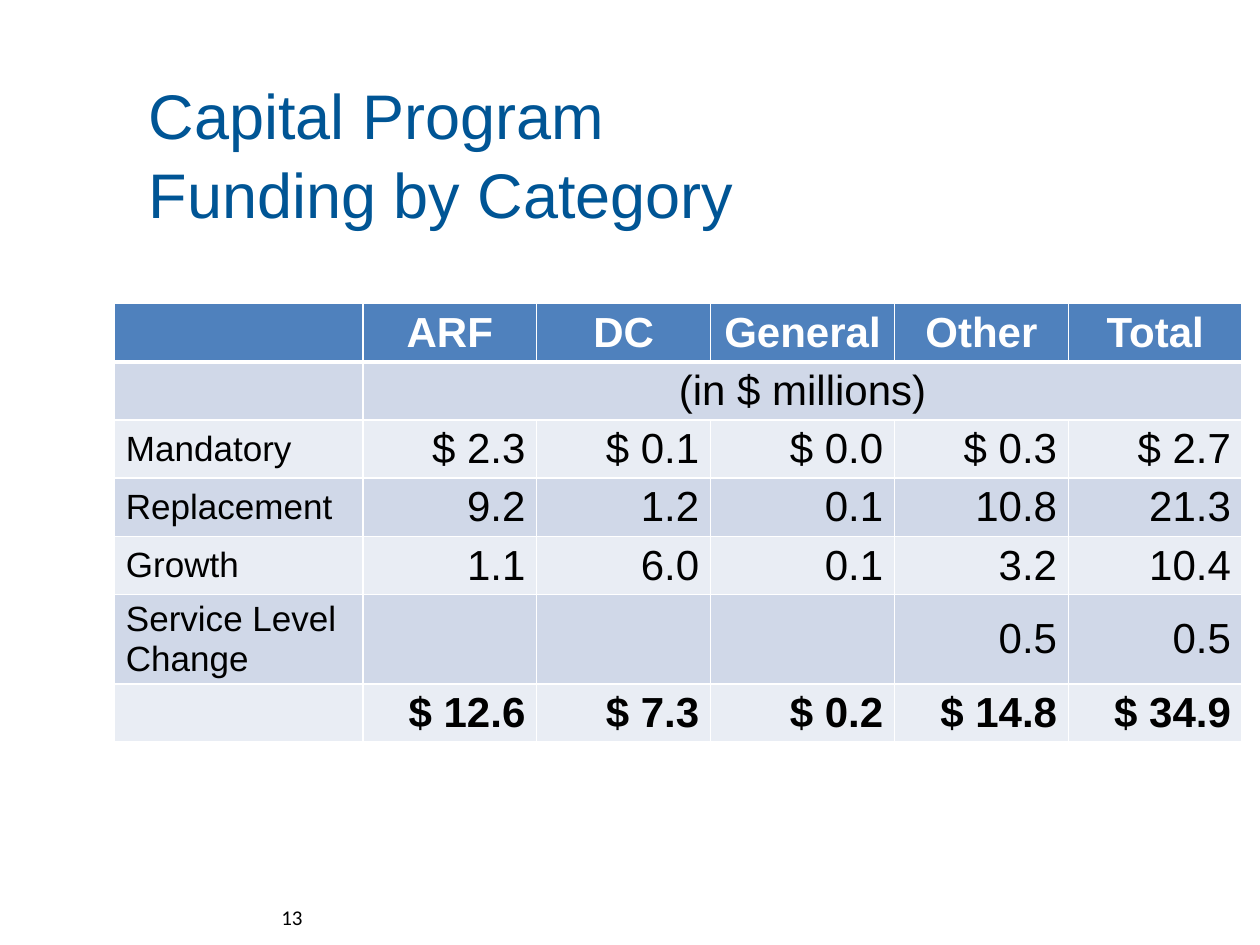
from typing import NamedTuple

from lxml.etree import SubElement
from pptx import Presentation
from pptx.dml.color import RGBColor
from pptx.enum.text import MSO_ANCHOR as Anchor, MSO_AUTO_SIZE as AutoSize, PP_ALIGN as Align
from pptx.oxml.ns import qn
from pptx.util import Inches, Pt

COLORS = {
    "title": "005595",
    "header": "4F81BD",
    "dark_band": "D0D8E8",
    "light_band": "E9EDF4",
    "white": "FFFFFF",
    "black": "000000",
}


class Style(NamedTuple):
    size: int
    color: str = "black"
    bold: bool = False
    align: Align = Align.RIGHT
    name: str = "Arial"


class FundingRow(NamedTuple):
    category: str
    amounts: tuple
    style: Style


TITLE = Style(36, "title", align=Align.LEFT)
HEADER = Style(24, "white", True, Align.CENTER)
UNITS = Style(24, align=Align.CENTER)
CATEGORY = Style(20, align=Align.LEFT)
AMOUNT = Style(24)
TOTAL = Style(24, bold=True)
PAGE = Style(12, name="Calibri")

FUNDING = [
    FundingRow("", ("ARF", "DC", "General", "Other", "Total"), HEADER),
    FundingRow("", ("(in $ millions)", "", "", "", ""), UNITS),
    FundingRow("Mandatory", ("$ 2.3", "$ 0.1", "$ 0.0", "$ 0.3", "$ 2.7"), AMOUNT),
    FundingRow("Replacement", ("9.2", "1.2", "0.1", "10.8", "21.3"), AMOUNT),
    FundingRow("Growth", ("1.1", "6.0", "0.1", "3.2", "10.4"), AMOUNT),
    FundingRow("Service Level Change", ("", "", "", "0.5", "0.5"), AMOUNT),
    FundingRow("", ("$ 12.6", "$ 7.3", "$ 0.2", "$ 14.8", "$ 34.9"), TOTAL),
]
COLUMN_WIDTHS = [1.97, 1.38, 1.38, 1.46, 1.38, 1.38]
ROW_HEIGHTS = [0.16] + [0.41] * 6
CELL_FORMAT = {
    "margin_left": Inches(0.09),
    "margin_right": Inches(0.09),
    "margin_top": Inches(0.045),
    "margin_bottom": Inches(0.045),
    "vertical_anchor": Anchor.MIDDLE,
}
FRAME_FORMAT = {
    "word_wrap": True,
    "auto_size": AutoSize.NONE,
    "vertical_anchor": Anchor.MIDDLE,
}


def apply_format(target, values: dict) -> None:
    for key, value in values.items():
        setattr(target, key, value)


def write(frame, text: str, style: Style) -> None:
    frame.text = text
    paragraph = frame.paragraphs[0]
    paragraph.alignment = style.align
    apply_format(paragraph.font, {
        "size": Pt(style.size), "bold": style.bold, "name": style.name})
    paragraph.font.color.rgb = RGBColor.from_string(COLORS[style.color])


def add_borders(cell, bottom_width: int) -> None:
    properties = cell._tc.get_or_add_tcPr()
    widths = {"a:lnL": 1, "a:lnR": 1, "a:lnT": 1, "a:lnB": bottom_width}
    for position, (side, width) in enumerate(widths.items()):
        line = SubElement(properties, qn(side), w=str(Pt(width)))
        fill = SubElement(line, qn("a:solidFill"))
        SubElement(fill, qn("a:srgbClr"), val=COLORS["white"])
        properties.insert(position, line)


def add_funding_table(slide) -> None:
    table = slide.shapes.add_table(
        len(FUNDING), len(COLUMN_WIDTHS), Inches(0.91), Inches(2.41),
        Inches(sum(COLUMN_WIDTHS)), Inches(sum(ROW_HEIGHTS))).table
    for column, width in zip(table.columns, COLUMN_WIDTHS):
        column.width = Inches(width)
    for row, height in zip(table.rows, ROW_HEIGHTS):
        row.height = Inches(height)
    for index, funding in enumerate(FUNDING):
        band = "header" if index == 0 else "dark_band" if index % 2 else "light_band"
        for position, text in enumerate((funding.category, *funding.amounts)):
            cell = table.cell(index, position)
            write(cell.text_frame, text, funding.style if position else CATEGORY)
            apply_format(cell, CELL_FORMAT)
            cell.fill.solid()
            cell.fill.fore_color.rgb = RGBColor.from_string(COLORS[band])
            add_borders(cell, 1 if index else 3)
    table.cell(1, 1).merge(table.cell(1, len(COLUMN_WIDTHS) - 1))


def main() -> None:
    deck = Presentation()
    deck.slide_width, deck.slide_height = Inches(10), Inches(7.5)
    slide = deck.slides.add_slide(deck.slide_layouts[5])

    title = slide.shapes.title
    apply_format(title, {
        "left": Inches(1.08), "top": Inches(0.58),
        "width": Inches(9), "height": Inches(1.25)})
    write(title.text_frame, "Capital Program\vFunding by Category", TITLE)
    title.text_frame.paragraphs[0].line_spacing = 1.05
    apply_format(title.text_frame, FRAME_FORMAT)

    add_funding_table(slide)

    page_number = slide.shapes.add_textbox(
        Inches(1.08), Inches(7.08), Inches(1.42), Inches(0.4))
    write(page_number.text_frame, "13", PAGE)
    apply_format(page_number.text_frame, FRAME_FORMAT)

    deck.save("out.pptx")


if __name__ == "__main__":
    main()
